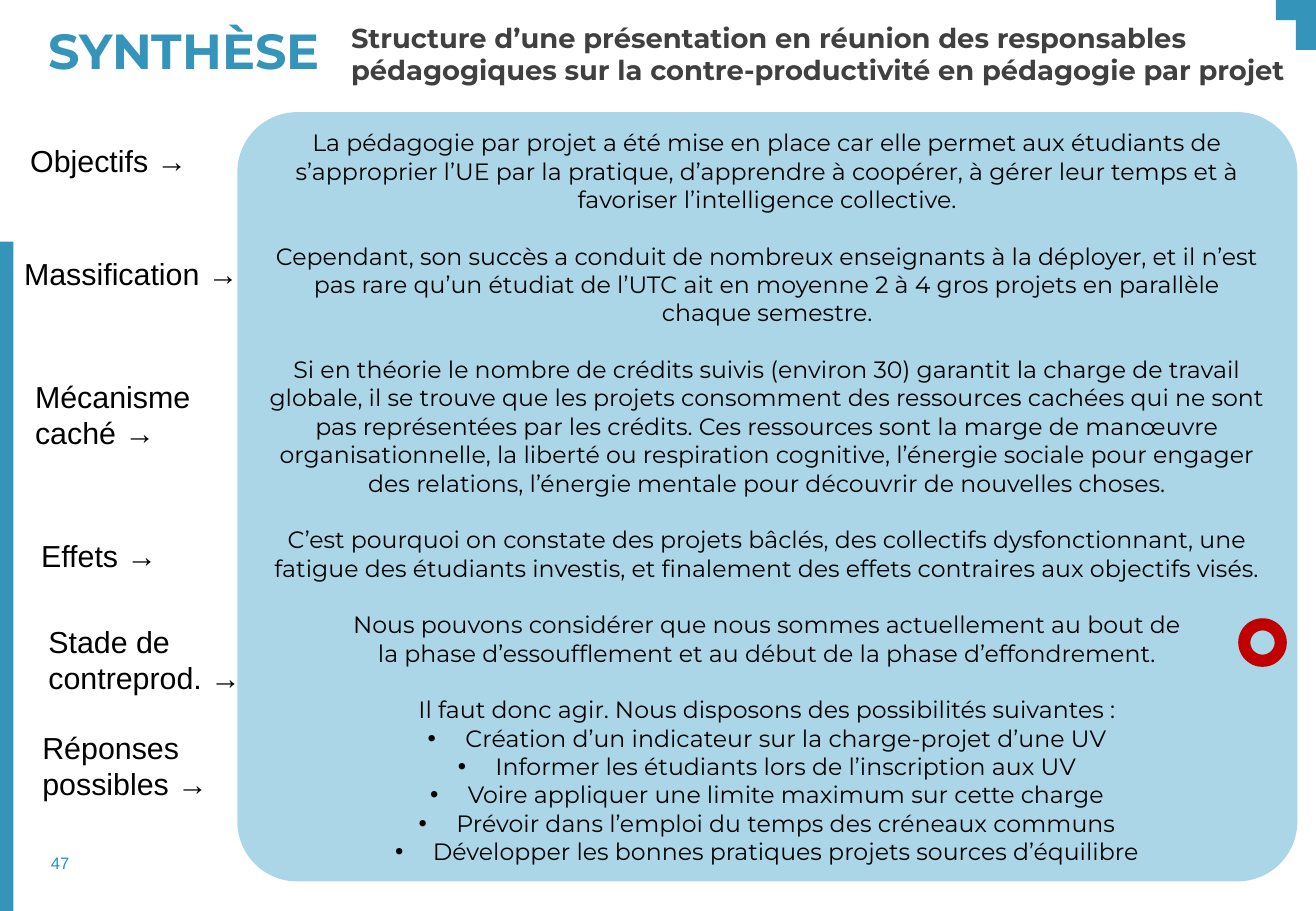
from dataclasses import dataclass

from lxml.etree import SubElement
from pptx import Presentation
from pptx.dml.color import RGBColor
from pptx.enum.shapes import MSO_SHAPE as Preset
from pptx.enum.text import MSO_ANCHOR as Anchor, MSO_AUTO_SIZE as AutoSize, PP_ALIGN as Align
from pptx.oxml.ns import qn
from pptx.util import Inches, Pt


@dataclass(frozen=True)
class Theme:
    accent: str = "3494BA"
    panel: str = "AAD6E7"
    number: str = "2392C9"
    subtitle: str = "404040"
    body: str = "000000"
    marker: str = "C00000"
    text_font: str = "Montserrat"
    label_font: str = "Arial"
    title_size: float = 29.2
    subtitle_size: float = 16.2
    label_size: float = 18
    body_size: float = 14
    number_size: float = 9.8
    section_gap: float = 16.8


class SynthesisSlide:
    def __init__(self, deck, theme):
        self.theme = theme
        self.slide = deck.slides.add_slide(deck.slide_layouts[5])

    def style(self, frame, font, size, color, bold=False, align=Align.LEFT):
        for paragraph in frame.paragraphs:
            paragraph.alignment = align
            for run in paragraph.runs:
                run.font.name = font
                run.font.size = Pt(size)
                run.font.bold = bold
                run.font.color.rgb = RGBColor.from_string(color)

    def shape(self, preset, box, color):
        shape = self.slide.shapes.add_shape(preset, *map(Inches, box))
        shape.shadow.inherit = False
        shape.fill.solid()
        shape.fill.fore_color.rgb = RGBColor.from_string(color)
        shape.line.fill.background()
        return shape

    def heading(self, holder, text, size, color):
        frame = holder.text_frame
        frame.text = text
        frame.word_wrap = True
        frame.auto_size = AutoSize.NONE
        frame.vertical_anchor = Anchor.TOP
        frame.margin_top = frame.margin_bottom = 0
        self.style(frame, self.theme.text_font, size, color, bold=True)

    def title(self, text, box):
        holder = self.slide.shapes.title
        holder.left, holder.top, holder.width, holder.height = map(Inches, box)
        self.heading(holder, text, self.theme.title_size, self.theme.accent)

    def subtitle(self, text, box):
        holder = self.slide.shapes.add_textbox(*map(Inches, box))
        self.heading(holder, text, self.theme.subtitle_size, self.theme.subtitle)

    def label(self, text, box):
        frame = self.slide.shapes.add_textbox(*map(Inches, box)).text_frame
        frame.text = text
        frame.word_wrap = False
        frame.auto_size = AutoSize.SHAPE_TO_FIT_TEXT
        self.style(frame, self.theme.label_font, self.theme.label_size, self.theme.body)

    def page_number(self, text, box):
        frame = self.slide.shapes.add_textbox(*map(Inches, box)).text_frame
        frame.text = text
        frame.word_wrap = True
        frame.margin_right = 0
        frame.vertical_anchor = Anchor.MIDDLE
        self.style(frame, self.theme.label_font, self.theme.number_size,
                   self.theme.number, align=Align.RIGHT)

    def panel(self, sections, responses, box):
        theme = self.theme
        panel = self.shape(Preset.ROUNDED_RECTANGLE, box, theme.panel)
        panel.adjustments[0] = 0.077
        panel.line.color.rgb = RGBColor.from_string(theme.panel)
        panel.line.width = Pt(1)
        frame = panel.text_frame
        frame.word_wrap = True
        frame.vertical_anchor = Anchor.MIDDLE
        frame.text = "\n".join([line for section in sections for line in section] + responses)
        section_starts = [section[0] for section in sections[1:]]
        for paragraph in frame.paragraphs:
            if paragraph.text in section_starts:
                paragraph.space_before = Pt(theme.section_gap)
            elif paragraph.text in responses:
                self.bullet(paragraph)
        self.style(frame, theme.text_font, theme.body_size, theme.body, align=Align.CENTER)

    def bullet(self, paragraph):
        properties = paragraph._p.get_or_add_pPr()
        properties.set("marL", str(Inches(0.31)))
        properties.set("indent", str(Inches(-0.31)))
        SubElement(properties, qn("a:buFont")).set("typeface", self.theme.label_font)
        SubElement(properties, qn("a:buChar")).set("char", "•")


SECTIONS = [
    ["La pédagogie par projet a été mise en place car elle permet aux étudiants de "
     "s’approprier l’UE par la pratique, d’apprendre à coopérer, à gérer leur temps et à "
     "favoriser l’intelligence collective."],
    ["Cependant, son succès a conduit de nombreux enseignants à la déployer, et il n’est "
     "pas rare qu’un étudiat de l’UTC ait en moyenne 2 à 4 gros projets en parallèle "
     "chaque semestre."],
    ["Si en théorie le nombre de crédits suivis (environ 30) garantit la charge de travail "
     "globale, il se trouve que les projets consomment des ressources cachées qui ne sont "
     "pas représentées par les crédits. Ces ressources sont la marge de manœuvre "
     "organisationnelle, la liberté ou respiration cognitive, l’énergie sociale pour engager "
     "des relations, l’énergie mentale pour découvrir de nouvelles choses."],
    ["C’est pourquoi on constate des projets bâclés, des collectifs dysfonctionnant, une "
     "fatigue des étudiants investis, et finalement des effets contraires aux objectifs visés."],
    ["Nous pouvons considérer que nous sommes actuellement au bout de",
     "la phase d’essoufflement et au début de la phase d’effondrement."],
    ["Il faut donc agir. Nous disposons des possibilités suivantes :"],
]
RESPONSES = [
    "Création d’un indicateur sur la charge-projet d’une UV",
    "Informer les étudiants lors de l’inscription aux UV",
    "Voire appliquer une limite maximum sur cette charge",
    "Prévoir dans l’emploi du temps des créneaux communs",
    "Développer les bonnes pratiques projets sources d’équilibre",
]
LABELS = [
    ("Objectifs →", (0.15, 1.12, 1.51, 0.4)),
    ("Massification →", (0.1, 2.05, 1.98, 0.4)),
    ("Mécanisme\ncaché →", (0.19, 3.06, 1.49, 0.71)),
    ("Effets →", (0.24, 4.37, 1.17, 0.4)),
    ("Stade de\ncontreprod. →", (0.3, 5.08, 1.86, 0.71)),
    ("Réponses\npossibles →", (0.25, 5.95, 1.58, 0.71)),
]


def main():
    deck = Presentation()
    deck.slide_width, deck.slide_height = Inches(10.83), Inches(7.5)
    theme = Theme()
    synthesis = SynthesisSlide(deck, theme)
    corner = synthesis.shape(Preset.CORNER, (10.5, 0, 0.33, 0.41), theme.accent)
    corner.rotation = 180
    synthesis.shape(Preset.RECTANGLE, (0, 1.99, 0.11, 5.51), theme.accent)
    synthesis.page_number("47", (0.14, 6.97, 0.43, 0.27))
    synthesis.subtitle("Structure d’une présentation en réunion des responsables pédagogiques "
                       "sur la contre-productivité en pédagogie par projet",
                       (2.79, 0.17, 8.62, 0.82))
    synthesis.title("SYNTHÈSE", (0.3, 0.17, 9.33, 0.6))
    synthesis.panel(SECTIONS, RESPONSES, (1.96, 0.93, 8.71, 6.32))
    for text, box in LABELS:
        synthesis.label(text, box)
    synthesis.shape(Preset.DONUT, (10.19, 5.09, 0.4, 0.4), theme.marker)
    deck.save("out.pptx")


if __name__ == "__main__":
    main()
